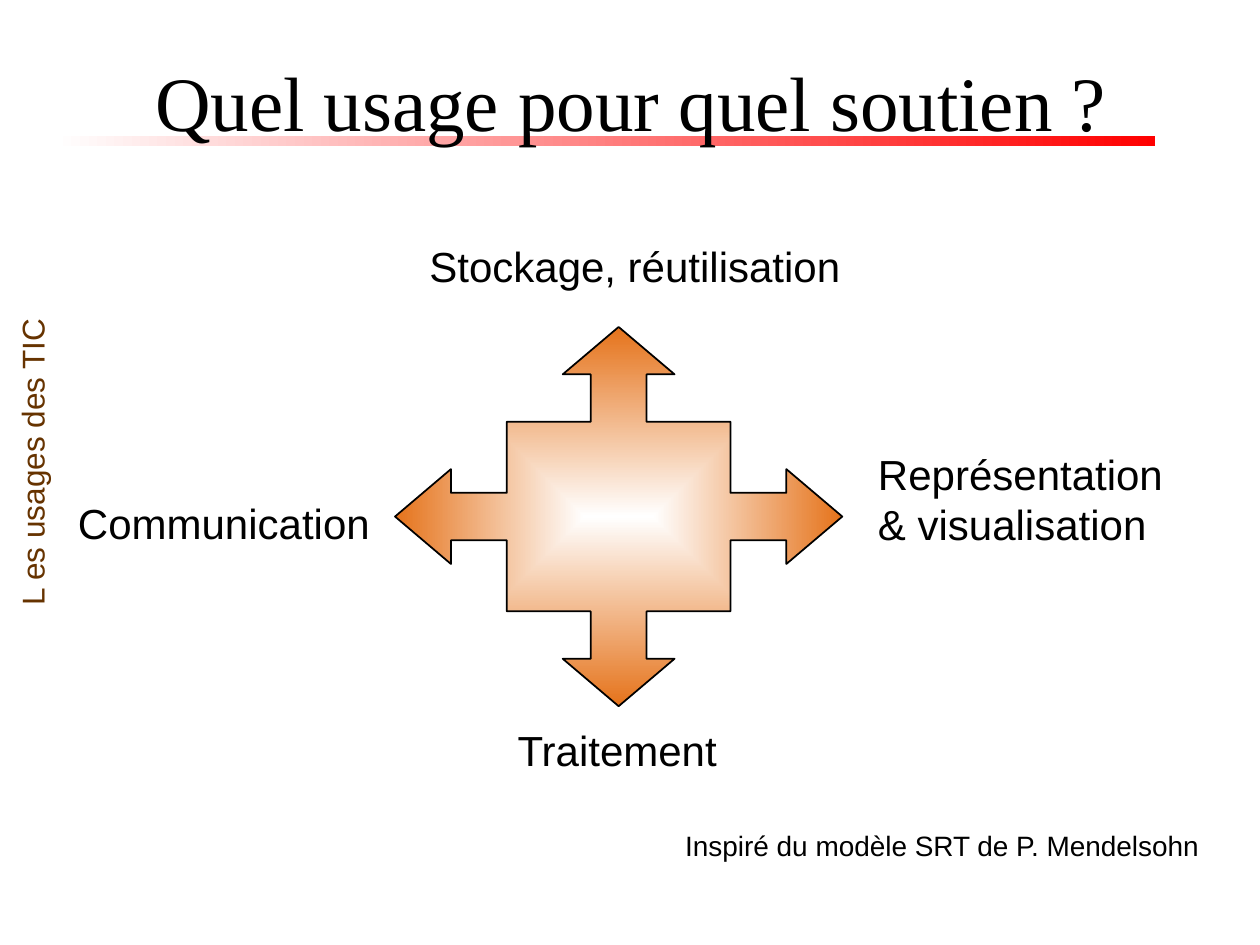
from lxml import etree
from pptx import Presentation
from pptx.dml.color import RGBColor
from pptx.enum.shapes import MSO_SHAPE
from pptx.enum.text import MSO_ANCHOR, MSO_AUTO_SIZE, PP_ALIGN
from pptx.oxml.ns import qn
from pptx.util import Inches, Pt

BLACK = RGBColor(0x00, 0x00, 0x00)
WHITE = RGBColor(0xFF, 0xFF, 0xFF)
RED = RGBColor(0xFF, 0x00, 0x00)
ORANGE = RGBColor(0xE5, 0x73, 0x1B)
BROWN = RGBColor(0x66, 0x33, 0x00)
RECT = MSO_SHAPE.RECTANGLE
MIDDLE = MSO_ANCHOR.MIDDLE
FIT = MSO_AUTO_SIZE.SHAPE_TO_FIT_TEXT
LEFT, CENTER = PP_ALIGN.LEFT, PP_ALIGN.CENTER


def fade_from_white(shape, color):
    shape.shadow.inherit = False
    shape.fill.gradient()
    shape.fill.gradient_angle = 0
    for stop, position, stop_color in zip(shape.fill.gradient_stops, (0, 1), (WHITE, color)):
        stop.position = position
        stop.color.rgb = stop_color


def add_text(shape, lines, size, color=BLACK, name="Arial", align=LEFT, wrap=False):
    tf = shape.text_frame
    tf.word_wrap = wrap
    for i, line in enumerate(lines):
        p = tf.paragraphs[0] if i == 0 else tf.add_paragraph()
        p.alignment = align
        r = p.add_run()
        r.text = line
        for key, value in {"size": Pt(size), "name": name}.items():
            setattr(r.font, key, value)
        r.font.color.rgb = color
    return tf


prs = Presentation()
prs.slide_width, prs.slide_height = Inches(10), Inches(7.5)
s = prs.slides.add_slide(prs.slide_layouts[6])

# Red rule under the title
rule = s.shapes.add_shape(RECT, Inches(0.43), Inches(1.08), Inches(8.74), Inches(0.08))
fade_from_white(rule, RED)
rule.line.fill.background()

# Title
title = s.shapes.add_textbox(Inches(0.29), Inches(0.17), Inches(9.44), Inches(1.25))
tf = add_text(title, ["Quel usage pour quel soutien ?"], 44,
              name="Times New Roman", align=CENTER, wrap=True)
tf.vertical_anchor = MIDDLE

# Labels: text, left, top, width, height, size, colour, rotation, wrap
labels = [
    ("L es usages des TIC", -0.99, 3.46, 2.49, 0.4, 18, BROWN, 270, False),
    ("Stockage, réutilisation", 3.31, 1.86, 3.46, 0.5, 24, BLACK, 0, False),
    ("Inspiré du modèle SRT de P. Mendelsohn", 5.34, 6.53, 4.33, 0.37, 16, BLACK, 0, False),
    ("Traitement", 4.01, 5.7, 3.19, 0.5, 24, BLACK, 0, True),
    ("Communication", 0.52, 3.9, 2.52, 0.5, 24, BLACK, 0, False),
]
for text, x, y, w, h, size, color, rotation, wrap in labels:
    sp = s.shapes.add_textbox(Inches(x), Inches(y), Inches(w), Inches(h))
    sp.rotation = rotation
    add_text(sp, [text], size, color, wrap=wrap).auto_size = FIT

# Four-way arrow: one quadrant on a 16 x 16 grid, mirrored around the centre
quadrant = [(0, -8), (2, -6), (1, -6), (1, -4), (4, -4), (4, -1), (6, -1), (6, -2), (8, 0)]
outline = (quadrant
           + [(x, -y) for x, y in quadrant[-2::-1]]
           + [(-x, -y) for x, y in quadrant[1:]]
           + [(-x, y) for x, y in quadrant[-2:0:-1]])
points = [(Inches(4.91 + x * 3.55 / 16), Inches(4.1 + y * 3.01 / 16)) for x, y in outline]
builder = s.shapes.build_freeform(*points[0])
builder.add_line_segments(points[1:], close=True)
arrow = builder.convert_to_shape()
fade_from_white(arrow, ORANGE)
arrow.line.color.rgb = BLACK
arrow.line.width = Pt(1)

# Make the arrow's gradient spread from its centre
grad = arrow.fill._xPr.find(qn("a:gradFill"))
grad.remove(grad.find(qn("a:lin")))
spread = etree.SubElement(grad, qn("a:path"), {"path": "rect"})
etree.SubElement(spread, qn("a:fillToRect"), {side: "50000" for side in "ltrb"})

# Label on a white panel
panel = s.shapes.add_shape(RECT, Inches(6.87), Inches(3.51), Inches(2.46), Inches(0.9))
panel.shadow.inherit = False
panel.fill.solid()
panel.fill.fore_color.rgb = WHITE
panel.line.fill.background()
tf = add_text(panel, ["Représentation", "& visualisation"], 24)
tf.vertical_anchor = MSO_ANCHOR.TOP
tf.auto_size = FIT

prs.save("out.pptx")
